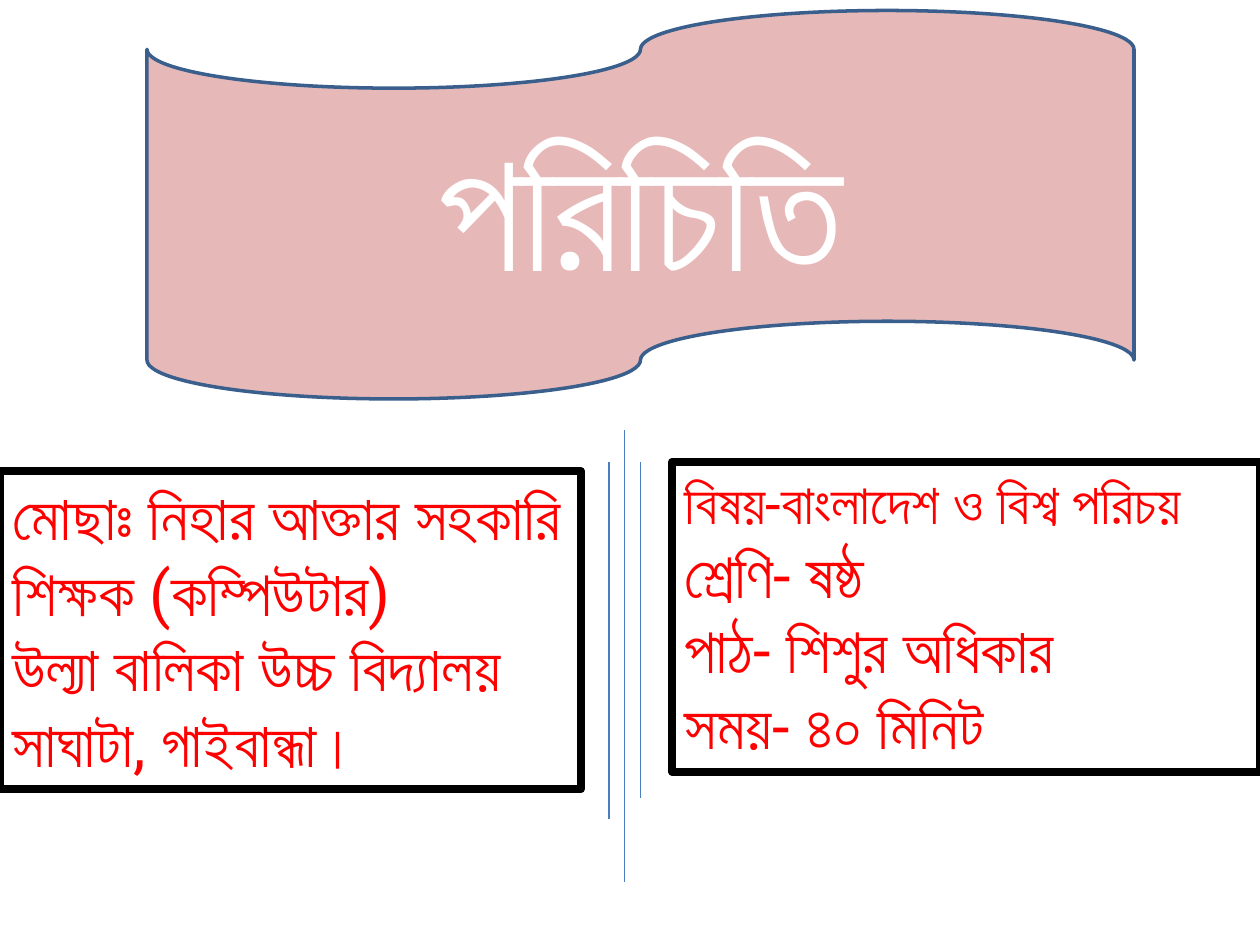
import pptx
import pptx.dml.color
import pptx.enum.shapes
import pptx.enum.text
import pptx.oxml.ns
import pptx.util
from lxml import etree

Pt = pptx.util.Pt
FONT = "Roboto"
COLORS = {
    "banner": "E6B9B8",
    "banner_line": "3A5F8C",
    "title": "FFFFFF",
    "divider": "4B7EBC",
    "frame": "000000",
    "text": "FF0000",
}


def rgb(name):
    """Return the named palette colour."""
    return pptx.dml.color.RGBColor.from_string(COLORS[name])


def add_run(p, text, size, color, bold=False):
    """Add one formatted run to a paragraph."""
    r = p.add_run()
    r.text = text
    r.font.name = FONT
    r.font.size = Pt(size)
    r.font.bold = bold
    r.font.color.rgb = rgb(color)


def set_line(sp, color, width):
    """Give a shape or connector a solid line."""
    sp.line.color.rgb = rgb(color)
    sp.line.width = Pt(width)


def add_banner(s, box, text):
    """Draw the wavy heading banner in the given box."""
    kind = pptx.enum.shapes.MSO_SHAPE.FLOWCHART_PUNCHED_TAPE
    sp = s.shapes.add_shape(kind, *map(Pt, box))
    sp.shadow.inherit = False
    sp.fill.solid()
    sp.fill.fore_color.rgb = rgb("banner")
    set_line(sp, "banner_line", 2)
    tf = sp.text_frame
    tf.vertical_anchor = pptx.enum.text.MSO_ANCHOR.MIDDLE
    p = tf.paragraphs[0]
    p.alignment = pptx.enum.text.PP_ALIGN.CENTER
    add_run(p, text, 96, "title", bold=True)


def add_dividers(s, box):
    """Draw three upright lines, the middle one filling the box height."""
    left, top, width, height = box
    spans = [(0.5, 0, height), (0, 18, 222), (1, 18, 210)]
    for share, start, end in spans:
        x = Pt(left + share * width)
        line = s.shapes.add_connector(
            pptx.enum.shapes.MSO_CONNECTOR.STRAIGHT,
            x, Pt(top + start), x, Pt(top + end))
        set_line(line, "divider", 0.75)
        etree.SubElement(line._element.spPr, pptx.oxml.ns.qn("a:effectLst"))


def add_details(s, box, lines):
    """Place a framed text box with one paragraph per (text, size) pair."""
    sp = s.shapes.add_textbox(*map(Pt, box))
    set_line(sp, "frame", 4.5)
    tf = sp.text_frame
    tf.word_wrap = True
    tf.auto_size = pptx.enum.text.MSO_AUTO_SIZE.SHAPE_TO_FIT_TEXT
    for i, (text, size) in enumerate(lines):
        p = tf.add_paragraph() if i else tf.paragraphs[0]
        add_run(p, text, size, "text")


def main():
    """Build the introduction slide and save it."""
    prs = pptx.Presentation()
    prs.slide_width, prs.slide_height = Pt(720), Pt(540)
    s = prs.slides.add_slide(prs.slide_layouts[6])
    add_banner(s, (84, 6, 564, 222), "পরিচিতি")
    add_dividers(s, (348, 246, 18, 258))
    add_details(s, (0, 269.3, 332, 181.7), [
        ("মোছাঃ নিহার আক্তার সহকারি শিক্ষক (কম্পিউটার)", 36),
        ("উল্যা বালিকা উচ্চ বিদ্যালয়", 36),
        ("সাঘাটা, গাইবান্ধা।", 36),
    ])
    add_details(s, (384, 264, 336, 177), [
        ("বিষয়-বাংলাদেশ ও বিশ্ব পরিচয়", 32),
        ("শ্রেণি- ষষ্ঠ", 36),
        ("পাঠ- শিশুর অধিকার", 36),
        ("সময়- ৪০ মিনিট", 36),
    ])
    prs.save("out.pptx")


if __name__ == "__main__":
    main()
